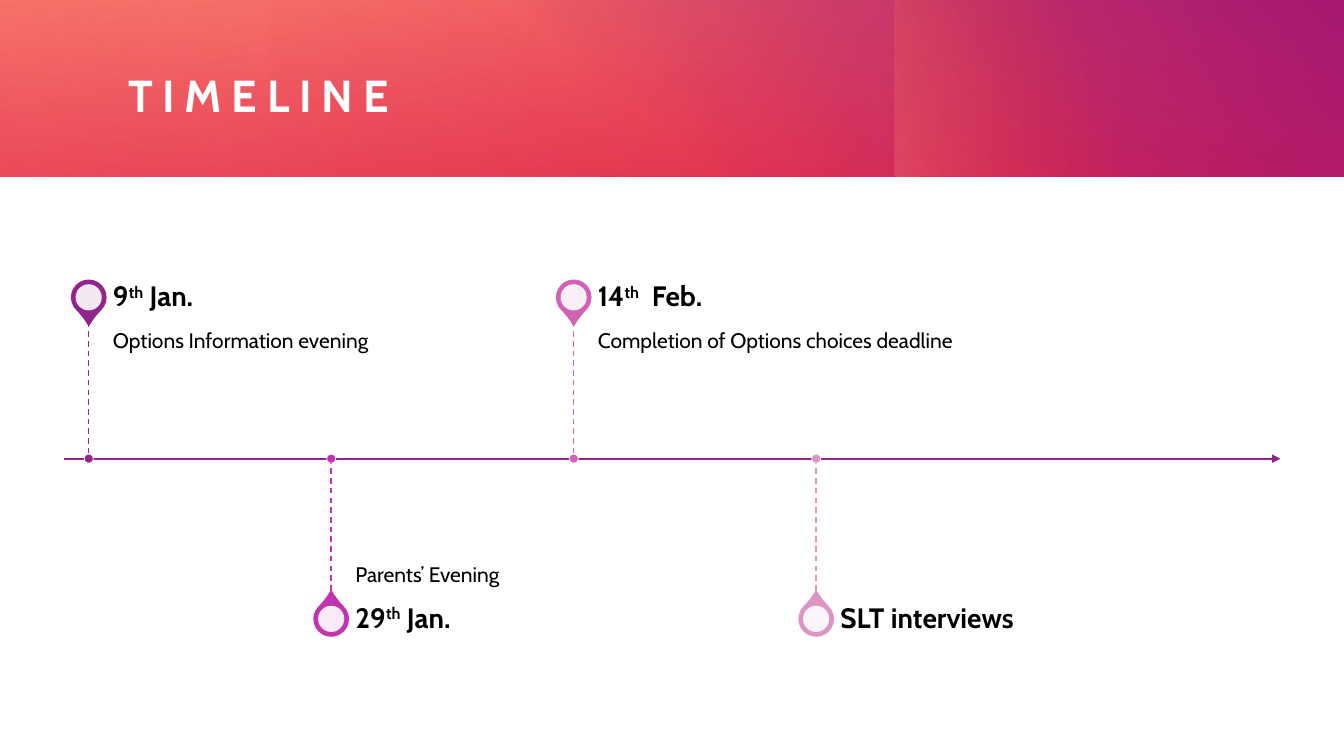
import dataclasses

import pptx
import pptx.dml.color
import pptx.enum.dml
import pptx.enum.shapes
import pptx.enum.text
import pptx.oxml
import pptx.oxml.ns
import pptx.util

Inches = pptx.util.Inches
Pt = pptx.util.Pt
Kind = pptx.enum.shapes.MSO_SHAPE
Anchor = pptx.enum.text.MSO_ANCHOR
NS = pptx.oxml.ns.nsdecls("a")


@dataclasses.dataclass(frozen=True)
class Theme:
    font: str = "Cabin"
    white: str = "FFFFFF"
    ink: str = "000000"
    red: str = "DA002F"
    coral: str = "FF907A"
    flame: str = "FE4A00"
    plum: str = "92248E"
    pins: tuple = ("92248E", "C134AD", "D262B6", "DE95C4")
    head: int = 32
    date: int = 20
    note: int = 15


THEME = Theme()
AXIS = 4.55
FIRST = 0.88
STEP = 2.405

# left, top, width, height, rotation, gradient angle, stops of (place, colour, opacity)
BANDS = [
    (0, 0, 13.33, 1.75, 0, 260, [(0, THEME.red, 83), (100, THEME.coral, 100)]),
    (4.81, 0, 8.52, 1.75, 0, 310, [(22, THEME.plum, 0), (99, THEME.plum, 100)]),
    (9.87, -0.99, 1.75, 3.74, 270, 250, [(45, THEME.flame, 0), (99, THEME.coral, 33)]),
    (2.68, 0, 10.64, 1.75, 180, 330, [(0, THEME.red, 30), (99, THEME.red, 0)]),
    (0, 0, 8.65, 1.75, 0, 340, [(0, THEME.red, 21), (99, THEME.red, 0)]),
]

# date as (text, raised) pieces, then the note
EVENTS = [
    ([("9", False), ("th", True), (" Jan.", False)], "Options Information evening"),
    ([("29", False), ("th", True), (" Jan.", False)], "Parents’ Evening"),
    ([("14", False), ("th", True), ("  Feb.", False)],
     "Completion of Options choices deadline"),
    ([("SLT interviews", False)], ""),
]


def rgb(code):
    return pptx.dml.color.RGBColor.from_string(code)


def add_box(slide, kind, left, top, width, height, fill, line=None, weight=1):
    box = slide.shapes.add_shape(
        kind, Inches(left), Inches(top), Inches(width), Inches(height))
    box.shadow.inherit = False
    box.fill.solid()
    box.fill.fore_color.rgb = rgb(fill)
    if line:
        box.line.color.rgb = rgb(line)
        box.line.width = Pt(weight)
    else:
        box.line.fill.background()
    return box


def add_disc(slide, x, y, size, *paint):
    """Draw a circle centred on x, y."""
    return add_box(slide, Kind.OVAL, x - size / 2, y - size / 2, size, size, *paint)


def fade(color, alpha):
    return f'<a:srgbClr {NS} val="{color}"><a:alpha val="{alpha * 1000}"/></a:srgbClr>'


def add_band(slide, left, top, width, height, turn, angle, stops):
    band = add_box(slide, Kind.RECTANGLE, left, top, width, height, THEME.white)
    band.rotation = turn
    marks = "".join(f'<a:gs pos="{place * 1000}">{fade(color, alpha)}</a:gs>'
                    for place, color, alpha in stops)
    grad = pptx.oxml.parse_xml(
        f'<a:gradFill {NS} rotWithShape="1"><a:gsLst>{marks}</a:gsLst>'
        f'<a:lin ang="{angle * 60000}" scaled="0"/></a:gradFill>')
    props = band.element.spPr
    props.replace(props.find(pptx.oxml.ns.qn("a:solidFill")), grad)


def add_line(slide, x1, y1, x2, y2, color, weight):
    line = slide.shapes.add_connector(
        pptx.enum.shapes.MSO_CONNECTOR.STRAIGHT,
        Inches(x1), Inches(y1), Inches(x2), Inches(y2))
    line.line.color.rgb = rgb(color)
    line.line.width = Pt(weight)
    line.element.spPr.append(pptx.oxml.parse_xml(f"<a:effectLst {NS}/>"))
    return line


def set_frame(frame, anchor, insets):
    frame.word_wrap = True
    frame.vertical_anchor = anchor
    (frame.margin_left, frame.margin_top,
     frame.margin_right, frame.margin_bottom) = map(Inches, insets)


def set_font(run, size, color, bold):
    run.font.name = THEME.font
    run.font.size = Pt(size)
    run.font.color.rgb = rgb(color)
    run.font.bold = bold


def add_text(slide, x, y, height, parts, size, bold, anchor, insets):
    box = slide.shapes.add_textbox(
        Inches(x), Inches(y), Inches(4.01), Inches(height))
    set_frame(box.text_frame, anchor, insets)
    para = box.text_frame.paragraphs[0]
    para.line_spacing = 0.9
    for text, raised in parts:
        run = para.add_run()
        run.text = text
        set_font(run, size, THEME.ink, bold)
        if raised:
            run.font._element.set("baseline", "30000")


def add_title(slide, text):
    title = slide.shapes.title
    title.left, title.top, title.width, title.height = map(
        Inches, (1.27, 0.41, 11.35, 1.06))
    title.text_frame.text = text
    set_frame(title.text_frame, Anchor.MIDDLE, (0, 0, 0, 0))
    para = title.text_frame.paragraphs[0]
    para.alignment = pptx.enum.text.PP_ALIGN.LEFT
    run = para.runs[0]
    set_font(run, THEME.head, THEME.white, True)
    run.font._element.set("spc", "700")
    slide.shapes.element.append(title.element)  # bring in front of the bands


def add_axis(slide):
    axis = add_line(slide, 0.63, AXIS, 12.7, AXIS, THEME.plum, 1.5)
    axis.line._get_or_add_ln().append(
        pptx.oxml.parse_xml(f'<a:tailEnd {NS} type="triangle"/>'))


def add_event(slide, x, above, color, date, note):
    """Draw a pin with its date and note, above or below the axis."""
    mid, tip, top = (2.95, 3.19, 2.71) if above else (6.14, 5.9, 5.9)
    pin = add_box(slide, Kind.TEAR, x - 0.17, mid - 0.17, 0.34, 0.34, color, color)
    pin.adjustments[0] = 1.15
    pin.rotation = 135 if above else 315

    hole = add_disc(slide, x, mid, 0.26, THEME.white)
    fill = hole.element.spPr.find(pptx.oxml.ns.qn("a:solidFill"))
    fill.replace(fill[0], pptx.oxml.parse_xml(fade(THEME.white, 90)))

    if note:
        anchor = Anchor.TOP if above else Anchor.BOTTOM
        insets = (0, 0.1, 0.1, 0.16) if above else (0, 0.16, 0, 0.1)
        add_text(slide, x + 0.24, min(tip, AXIS), 1.36, [(note, False)],
                 THEME.note, False, anchor, insets)
    add_text(slide, x + 0.24, top, 0.48, date,
             THEME.date, True, Anchor.MIDDLE, (0, 0, 0.14, 0))

    stem = add_line(slide, x, min(tip, AXIS), x, max(tip, AXIS), color, 1)
    stem.line.dash_style = pptx.enum.dml.MSO_LINE.DASH
    add_disc(slide, x, AXIS, 0.09, color, THEME.white, 0.5)


def main():
    deck = pptx.Presentation()
    deck.slide_width = Inches(13.33)
    deck.slide_height = Inches(7.5)
    slide = deck.slides.add_slide(deck.slide_layouts[5])
    for band in BANDS:
        add_band(slide, *band)
    add_title(slide, "TIMELINE")
    add_axis(slide)
    for i, (date, note) in enumerate(EVENTS):
        add_event(slide, FIRST + i * STEP, i % 2 == 0, THEME.pins[i], date, note)
    deck.save("out.pptx")


if __name__ == "__main__":
    main()
